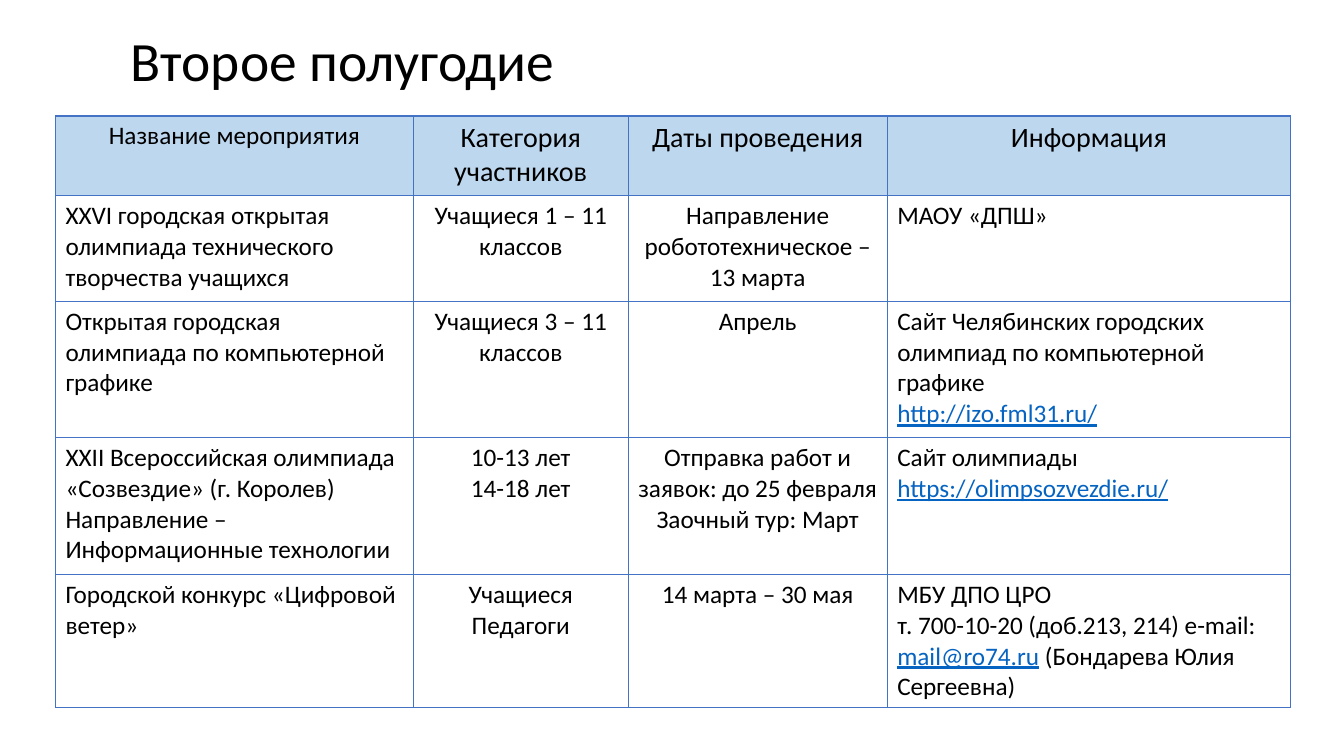
import pptx
import pptx.dml.color
import pptx.enum.text
import pptx.oxml
import pptx.oxml.ns
import pptx.util

ALIGN = pptx.enum.text.PP_ALIGN
WIDTH, HEIGHT = 13.33, 7.5

# Text between bars is shown as a link
HEADERS = ["Название мероприятия", "Категория участников", "Даты проведения", "Информация"]
EVENTS = [
    ["XXVI городская открытая олимпиада технического творчества учащихся",
     "Учащиеся 1 – 11 классов",
     "Направление\nробототехническое – 13 марта",
     "МАОУ «ДПШ»"],
    ["Открытая городская олимпиада по компьютерной графике",
     "Учащиеся 3 – 11 классов",
     "Апрель",
     "Сайт Челябинских городских олимпиад по компьютерной графике\n|http://izo.fml31.ru/|"],
    ["XXII Всероссийская олимпиада «Созвездие» (г. Королев)\n"
     "Направление – Информационные технологии",
     "10-13 лет\n14-18 лет",
     "Отправка работ и заявок: до 25 февраля\nЗаочный тур: Март",
     "Сайт олимпиады\n|https://olimpsozvezdie.ru/|"],
    ["Городской конкурс «Цифровой ветер»",
     "Учащиеся\nПедагоги",
     "14 марта – 30 мая",
     "МБУ ДПО ЦРО\nт. 700-10-20 (доб.213, 214) e-mail: |mail@ro74.ru| (Бондарева Юлия Сергеевна)"],
]
COLUMN_WIDTHS = [3.55, 2.13, 2.57, 4]
ROW_HEIGHTS = [0.79, 1.05, 1.35, 1.36, 1.32]
HEADER_SIZES = [18, 20, 20, 20]


def color(hex_string):
    return pptx.dml.color.RGBColor.from_string(hex_string)


class SlideBuilder:
    font_name = "Calibri"
    text_color, link_color = "000000", "0563C1"
    header_fill, body_fill, border_color = "BDD7EE", "FFFFFF", "4472C4"

    def __init__(self, presentation):
        self.presentation = presentation
        self.slide = presentation.slides.add_slide(presentation.slide_layouts[6])

    def box(self, left, top, width, height):
        """Turn shares of the slide's size into lengths."""
        slide_width = self.presentation.slide_width
        slide_height = self.presentation.slide_height
        return (round(left * slide_width), round(top * slide_height),
                round(width * slide_width), round(height * slide_height))

    def format_run(self, run, size, is_link=False):
        run.font.name = self.font_name
        run.font.size = pptx.util.Pt(size)
        run.font.color.rgb = color(self.link_color if is_link else self.text_color)
        run.font.underline = is_link

    def title(self, text, area, size):
        text_frame = self.slide.shapes.add_textbox(*self.box(*area)).text_frame
        text_frame.word_wrap = True
        text_frame.vertical_anchor = pptx.enum.text.MSO_ANCHOR.MIDDLE
        text_frame.text = text
        paragraph = text_frame.paragraphs[0]
        paragraph.line_spacing = 0.9
        self.format_run(paragraph.runs[0], size)

    def borders(self, cell):
        properties = cell._tc.get_or_add_tcPr()
        for position, side in enumerate(("lnL", "lnR", "lnT", "lnB")):
            line = pptx.oxml.parse_xml(
                f'<a:{side} {pptx.oxml.ns.nsdecls("a")} w="12700"><a:solidFill>'
                f'<a:srgbClr val="{self.border_color}"/></a:solidFill></a:{side}>')
            properties.insert(position, line)

    def cell(self, cell, text, size, alignment, fill):
        cell.fill.solid()
        cell.fill.fore_color.rgb = color(fill)
        self.borders(cell)
        lines = text.split("\n")
        cell.text_frame.text = "\n".join(line.split("|")[0] for line in lines)
        for paragraph, line in zip(cell.text_frame.paragraphs, lines):
            paragraph.alignment = alignment
            for run in paragraph.runs:
                self.format_run(run, size)
            for index, piece in enumerate(line.split("|")[1:]):
                if piece:
                    run = paragraph.add_run()
                    run.text = piece
                    self.format_run(run, size, is_link=index % 2 == 0)

    def table(self, rows, area):
        table = self.slide.shapes.add_table(
            len(rows), len(rows[0]), *self.box(*area)).table
        table.horz_banding = False
        for column, width in zip(table.columns, COLUMN_WIDTHS):
            column.width = pptx.util.Inches(width)
        for row, height in zip(table.rows, ROW_HEIGHTS):
            row.height = pptx.util.Inches(height)
        for i, texts in enumerate(rows):
            for j, text in enumerate(texts):
                is_header = i == 0
                centred = is_header or j in (1, 2)
                self.cell(table.cell(i, j), text,
                          HEADER_SIZES[j] if is_header else 18,
                          ALIGN.CENTER if centred else ALIGN.LEFT,
                          self.header_fill if is_header else self.body_fill)


def main():
    presentation = pptx.Presentation()
    presentation.slide_width = pptx.util.Inches(WIDTH)
    presentation.slide_height = pptx.util.Inches(HEIGHT)
    builder = SlideBuilder(presentation)

    # Heading
    builder.title("Второе полугодие",
                  (1.2 / WIDTH, 0.31 / HEIGHT, 11 / WIDTH, 0.65 / HEIGHT), 39.6)

    # Schedule of events
    builder.table([HEADERS] + EVENTS,
                  (0.55 / WIDTH, 1.15 / HEIGHT,
                   sum(COLUMN_WIDTHS) / WIDTH, sum(ROW_HEIGHTS) / HEIGHT))

    presentation.save("out.pptx")


if __name__ == "__main__":
    main()
